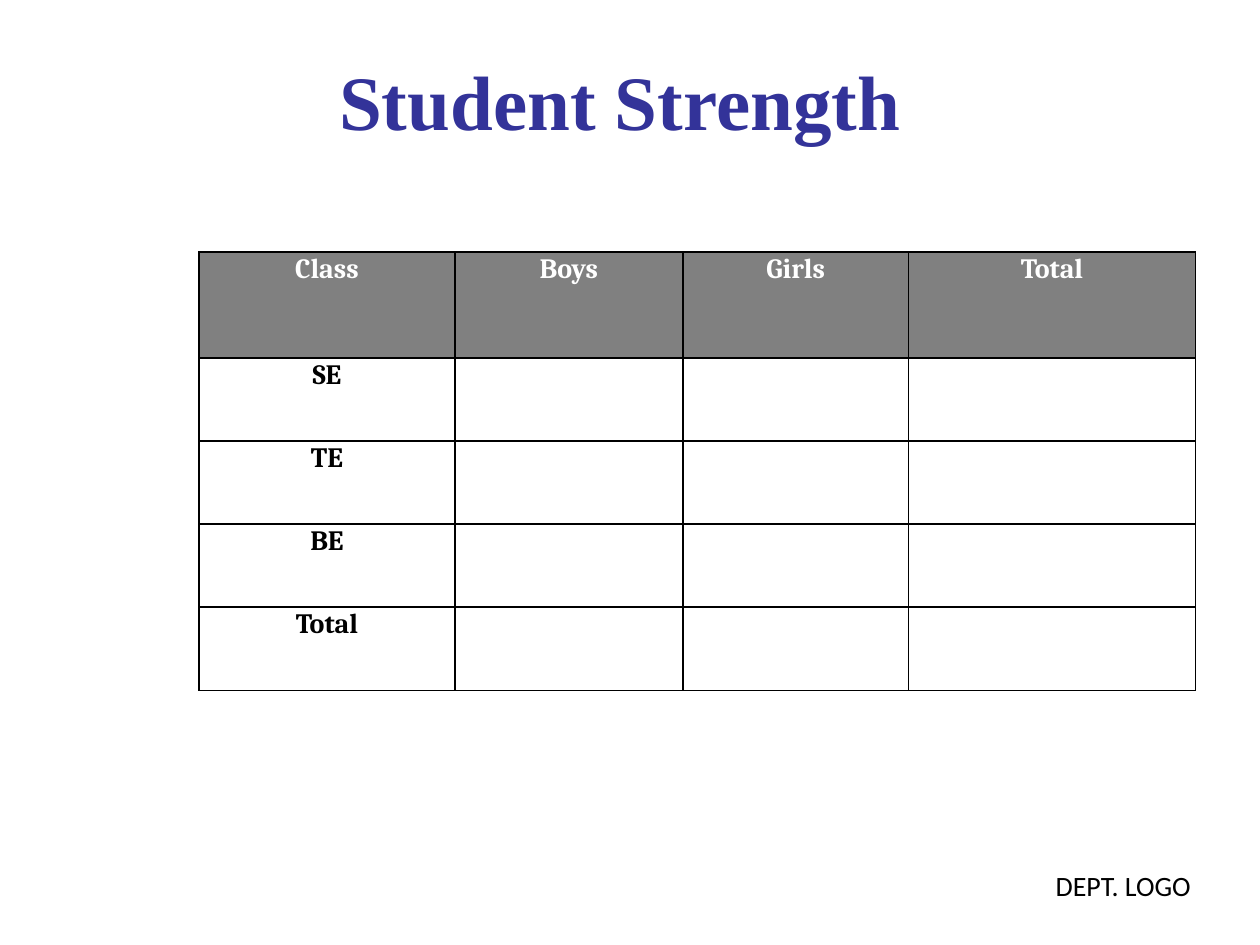
from lxml.etree import SubElement
from pptx import Presentation
from pptx.dml.color import RGBColor
from pptx.enum.shapes import MSO_SHAPE
from pptx.enum.text import MSO_ANCHOR, PP_ALIGN
from pptx.oxml.ns import qn
from pptx.util import Inches, Pt

TITLE = "Student Strength"
LOGO_LABEL = "DEPT. LOGO"
STRENGTH = [
    ("Class", "Boys", "Girls", "Total"),
    ("SE", "", "", ""),
    ("TE", "", "", ""),
    ("BE", "", "", ""),
    ("Total", "", "", ""),
]
COLUMN_WIDTHS = (2.03, 1.81, 1.79, 2.28)
ROW_HEIGHTS = (0.84,) + (0.66,) * 4
COLORS = {
    "title": "333399",
    "header": "808080",
    "white": "FFFFFF",
    "black": "000000",
}


def color(name):
    return RGBColor.from_string(COLORS[name])


def write(text_frame, text, font_name, size, color_name, bold=False):
    text_frame.text = text
    paragraph = text_frame.paragraphs[0]
    paragraph.alignment = PP_ALIGN.CENTER
    for run in paragraph.runs:
        run.font.name = font_name
        run.font.size = Pt(size)
        run.font.bold = bold
        run.font.color.rgb = color(color_name)


def add_borders(cell):
    properties = cell._tc.get_or_add_tcPr()
    for side in ("a:lnL", "a:lnR", "a:lnT", "a:lnB"):
        border = SubElement(properties, qn(side), w=str(Pt(1)))
        fill = SubElement(border, qn("a:solidFill"))
        SubElement(fill, qn("a:srgbClr"), val=COLORS["black"])


def add_logo_label(slide):
    logo = slide.shapes.add_shape(
        MSO_SHAPE.RECTANGLE, Inches(7.83), Inches(6.55), Inches(2.17), Inches(0.95)
    )
    logo.shadow.inherit = False
    logo.fill.solid()
    logo.fill.fore_color.rgb = color("white")
    logo.line.fill.background()
    logo.text_frame.vertical_anchor = MSO_ANCHOR.MIDDLE
    write(logo.text_frame, LOGO_LABEL, "Calibri", 16, "black")


def add_title(slide):
    title = slide.shapes.title
    title.left, title.top = Inches(1.92), Inches(0)
    title.width, title.height = Inches(6), Inches(1.58)
    title.text_frame.vertical_anchor = MSO_ANCHOR.MIDDLE
    write(title.text_frame, TITLE, "Times New Roman", 44, "title", bold=True)


def add_strength_table(slide):
    table = slide.shapes.add_table(
        len(STRENGTH), len(COLUMN_WIDTHS), Inches(1.58), Inches(2),
        Inches(sum(COLUMN_WIDTHS)), Inches(sum(ROW_HEIGHTS)),
    ).table
    table.horz_banding = False
    for column, width in zip(table.columns, COLUMN_WIDTHS):
        column.width = Inches(width)
    for row, height in zip(table.rows, ROW_HEIGHTS):
        row.height = Inches(height)
    for row_index, entries in enumerate(STRENGTH):
        is_header = row_index == 0
        for column_index, entry in enumerate(entries):
            cell = table.cell(row_index, column_index)
            cell.margin_left = cell.margin_right = cell.margin_top = Inches(0.01)
            cell.margin_bottom = 0
            add_borders(cell)
            if is_header:
                cell.fill.solid()
                cell.fill.fore_color.rgb = color("header")
            else:
                cell.fill.background()
            text_color = "white" if is_header else "black"
            write(cell.text_frame, entry, "Cambria", 16, text_color, bold=True)


def main():
    presentation = Presentation()
    presentation.slide_width = Inches(10)
    presentation.slide_height = Inches(7.5)
    slide = presentation.slides.add_slide(
        presentation.slide_layouts.get_by_name("Title Only")
    )
    add_logo_label(slide)
    add_title(slide)
    add_strength_table(slide)
    presentation.save("out.pptx")


if __name__ == "__main__":
    main()
